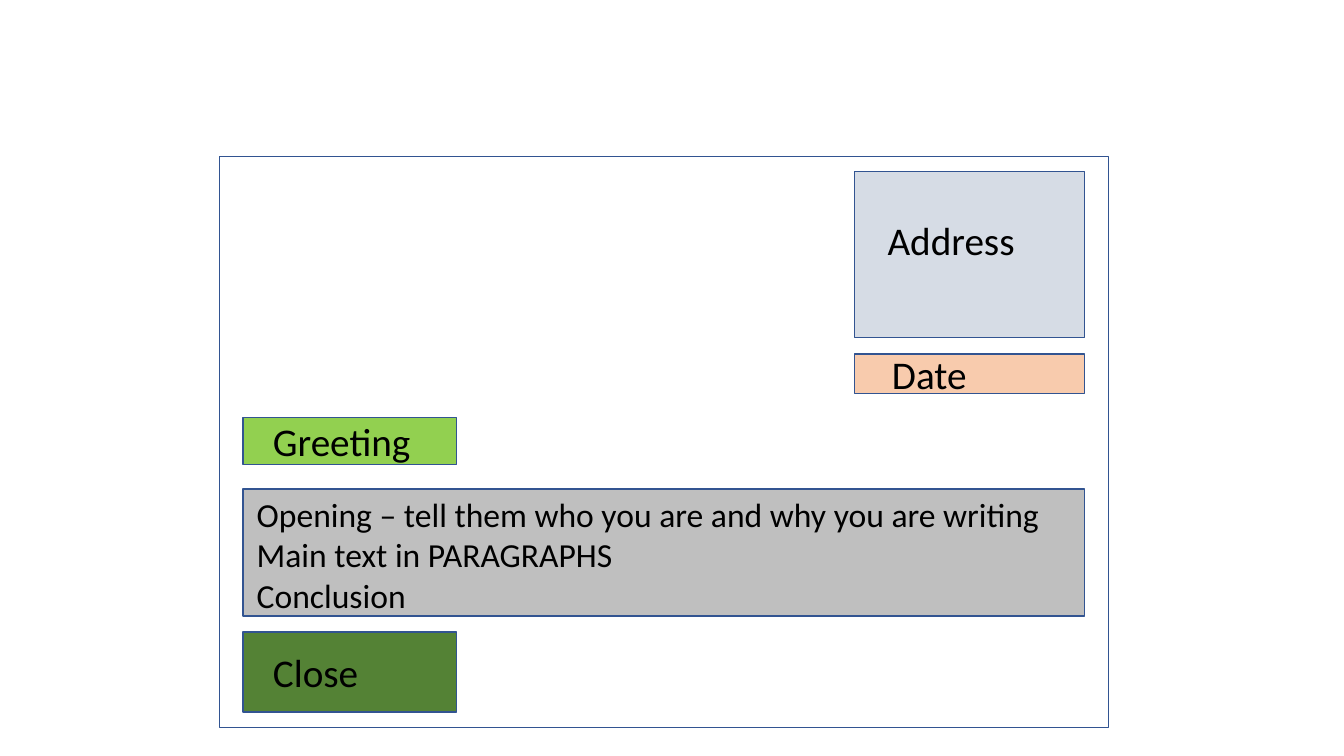
import pptx
import pptx.dml.color
import pptx.enum.shapes
import pptx.enum.text
import pptx.util

Cm = pptx.util.Cm
Pt = pptx.util.Pt
RGBColor = pptx.dml.color.RGBColor

WHITE = RGBColor(0xFF, 0xFF, 0xFF)
BLACK = RGBColor(0x00, 0x00, 0x00)
OUTLINE = RGBColor(0x32, 0x54, 0x91)
PALE_BLUE = RGBColor(0xD6, 0xDC, 0xE5)
PEACH = RGBColor(0xF8, 0xCB, 0xAD)
LIME = RGBColor(0x92, 0xD0, 0x50)
GREY = RGBColor(0xBF, 0xBF, 0xBF)
GREEN = RGBColor(0x54, 0x82, 0x35)

# Lengths in centimetres
LETTER = (5.54, 3.94, 22.4, 14.4)
LEFT_EDGE, RIGHT_EDGE = 6.12, 27.33
SENDER_WIDTH, SIGN_WIDTH = 5.79, 5.38
BODY_WIDTH = RIGHT_EDGE - LEFT_EDGE
SENDER_LEFT = RIGHT_EDGE - SENDER_WIDTH
LABEL_WIDTH, LABEL_HEIGHT = 4.39, 1.45

# Left, top, width, height, fill
PARTS = [
    (*LETTER, WHITE),
    (SENDER_LEFT, 4.32, SENDER_WIDTH, 4.19, PALE_BLUE),
    (SENDER_LEFT, 8.92, SENDER_WIDTH, 0.99, PEACH),
    (LEFT_EDGE, 10.52, SIGN_WIDTH, 1.19, LIME),
    (LEFT_EDGE, 12.32, BODY_WIDTH, 3.2, GREY),
    (LEFT_EDGE, 15.93, SIGN_WIDTH, 2.01, GREEN),
]

# Text, left, top
LABELS = [
    ("Address", 22.12, 5.33),
    ("Date", 22.23, 8.71),
    ("Greeting", 6.63, 10.39),
    ("Close", 6.63, 16.21),
]
BODY_LINES = [
    "Opening – tell them who you are and why you are writing",
    "Main text in PARAGRAPHS",
    "Conclusion",
]


def add_part(page, left, top, width, height, fill):
    shape = page.shapes.add_shape(
        pptx.enum.shapes.MSO_SHAPE.RECTANGLE,
        Cm(left), Cm(top), Cm(width), Cm(height))
    shape.shadow.inherit = False
    shape.fill.solid()
    shape.fill.fore_color.rgb = fill
    shape.line.color.rgb = OUTLINE
    shape.line.width = Pt(1)


def add_text(page, text, left, top, width=LABEL_WIDTH, height=LABEL_HEIGHT,
             size=28, color=BLACK, font="Calibri"):
    """Add a text box with one paragraph for each line of text."""
    box = page.shapes.add_textbox(Cm(left), Cm(top), Cm(width), Cm(height))
    frame = box.text_frame
    frame.text = text
    frame.word_wrap = True
    frame.auto_size = pptx.enum.text.MSO_AUTO_SIZE.SHAPE_TO_FIT_TEXT
    for para in frame.paragraphs:
        for span in para.runs:
            span.font.name = font
            span.font.size = Pt(size)
            span.font.color.rgb = color


def main():
    deck = pptx.Presentation()
    deck.slide_width, deck.slide_height = Cm(33.87), Cm(19.05)
    page = deck.slides.add_slide(deck.slide_layouts[6])
    for part in PARTS:
        add_part(page, *part)
    for label in LABELS:
        add_text(page, *label)
    add_text(page, "\n".join(BODY_LINES), 6.22, 12.32,
             width=20.32, height=3.33, size=24)
    deck.save("out.pptx")


if __name__ == "__main__":
    main()
